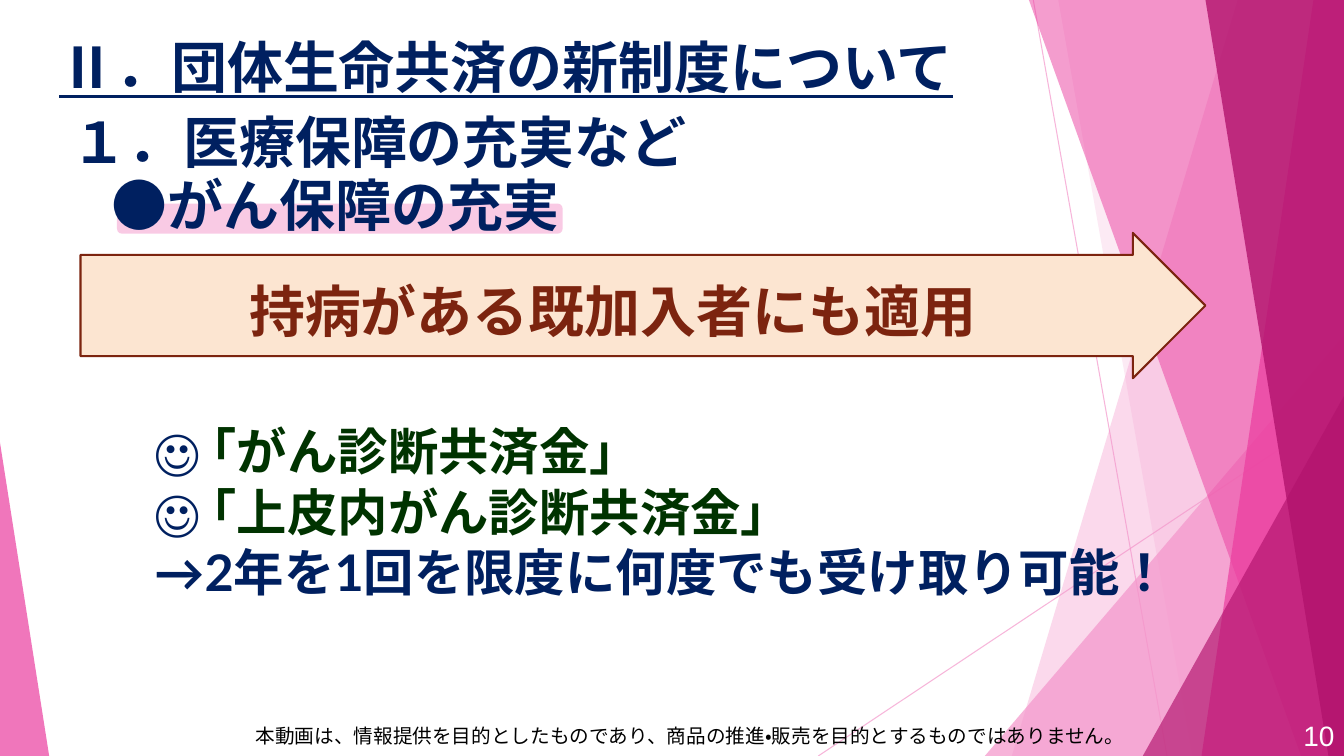
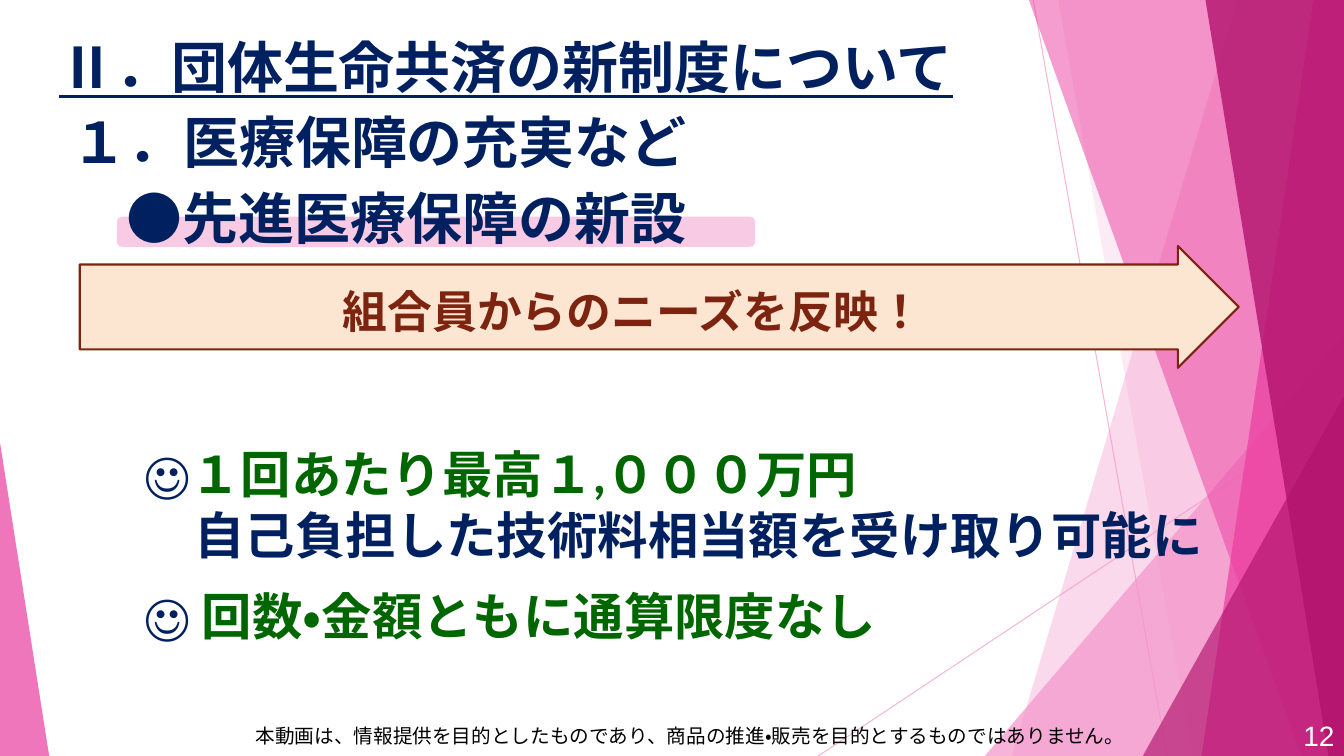
from pptx import Presentation
from pptx.dml.color import RGBColor
from pptx.enum import shapes, text
from pptx.enum.lang import MSO_LANGUAGE_ID
from pptx.oxml.ns import qn
from pptx.util import Cm, Pt
from lxml import etree

W, H = 33.87, 19.05
NAVY, BROWN, PEACH = "002060", "7C240F", "FCE5D1"
DARK_GREEN, GREEN = "003300", "006600"
PALE, PINK, DEEP = "F496CB", "EB3D9F", "B2136D"
BLACK, WHITE = "000000", "FFFFFF"
NOTE = "本動画は、情報提供を目的としたものであり、商品の推進・販売を目的とするものではありません。"
SECTION = "１．医療保障の充実など"
TITLE = [("Ⅱ", "Arial"), ("．団体生命共済の新制度について", "Lato")]
LEFT, CENTER, RIGHT = text.PP_ALIGN.LEFT, text.PP_ALIGN.CENTER, text.PP_ALIGN.RIGHT


def rgb(color):
    return RGBColor.from_string(color)


def cm(*values):
    return [Cm(v) for v in values]


def set_alpha(fmt, percent):
    clr = fmt._xPr.find(".//" + qn("a:srgbClr"))
    etree.SubElement(clr, qn("a:alpha")).set("val", str(percent * 1000))


def paint(sp, color, percent=None, line=None):
    sp.shadow.inherit = False
    sp.fill.solid()
    sp.fill.fore_color.rgb = rgb(color)
    if percent:
        set_alpha(sp.fill, percent)
    if line:
        sp.line.color.rgb = rgb(line)
        sp.line.width = Pt(1.5)
    else:
        sp.line.fill.background()


def add_run(p, words, size, color, font="Lato", bold=True, underline=None):
    r = p.add_run()
    r.text = words
    f = r.font
    f.name, f.size, f.bold, f.underline = font, Pt(size), bold, underline
    f.color.rgb = rgb(color)
    f.language_id = MSO_LANGUAGE_ID.JAPANESE


def add_label(parent, box, words, size, color, align=LEFT, **style):
    tf = parent.add_textbox(*cm(*box)).text_frame
    tf.word_wrap = True
    p = tf.paragraphs[0]
    p.alignment = align
    add_run(p, words, size, color, **style)
    return tf


def add_ray(g, x1, y1, x2, y2):
    c = g.add_connector(shapes.MSO_CONNECTOR.STRAIGHT, *cm(x1, y1, x2, y2))
    c.line.color.rgb = rgb(PALE)
    c.line.width = Pt(0.75)
    set_alpha(c.line.fill, 70)
    etree.SubElement(c.element.spPr, qn("a:effectLst"))


def add_band(g, top_x, bottom_x, color, percent):
    b = g.build_freeform(*cm(top_x, 0))
    b.add_line_segments([cm(W, 0), cm(W, H), cm(bottom_x, H)], close=True)
    paint(b.convert_to_shape(), color, percent)


def add_corner(g, x, width, height, apex, color, percent):
    sp = g.add_shape(shapes.MSO_SHAPE.ISOSCELES_TRIANGLE, *cm(x, H - height, width, height))
    sp.adjustments[0] = apex
    paint(sp, color, percent)


def add_facets(s, layout):
    group = s.shapes.add_group_shape()
    g = group.shapes
    add_ray(g, 26.04, 0, 29.41, H)
    add_ray(g, W, 10.24, 20.62, H)
    add_band(g, 31.19, 25.5, PALE, 36)
    add_band(g, 26.67, 30.05, PALE, 20)
    add_corner(g, 24.82, W - 24.82, 10.59, 1, PALE, 72)
    add_band(g, 25.93, 32.79, PINK, 50)
    add_band(g, 33.1, 30.28, PINK, 70)
    add_band(g, 30.38, 33.48, DEEP, 80)
    add_corner(g, 28.8, W - 28.8, 9.07, 1, DEEP, 66)
    add_corner(g, 0, 1.24, 7.9, 0, PINK, 70)
    for i, el in enumerate(group.element.iter(qn("p:cNvPr"))):
        el.set("id", str(100 + i))
    layout.shapes.element.append(group.element)


def place(sp, box):
    sp.left, sp.top, sp.width, sp.height = cm(*box)
    tf = sp.text_frame
    tf.word_wrap = True
    tf.auto_size = text.MSO_AUTO_SIZE.NONE
    tf.vertical_anchor = text.MSO_ANCHOR.TOP
    return tf


def add_title(s, box):
    p = place(s.shapes.title, box).paragraphs[0]
    p.alignment = LEFT
    for words, font in TITLE:
        add_run(p, words, 40, NAVY, font, underline=True)


def add_heading(s, box, words, shift):
    x, y, w, h = box
    g = s.shapes.add_group_shape().shapes
    bar = g.add_shape(shapes.MSO_SHAPE.ROUNDED_RECTANGLE, *cm(x, y, w, h))
    paint(bar, PALE, 50)
    add_label(g, (x + shift, y - 0.96, w + 0.7, 1.96), words, 40, NAVY)


def add_arrow(s, box, words, size):
    sp = s.shapes.add_shape(shapes.MSO_SHAPE.RIGHT_ARROW, *cm(*box))
    sp.adjustments[0] = 0.697
    paint(sp, PEACH, line=BROWN)
    tf = sp.text_frame
    tf.vertical_anchor = text.MSO_ANCHOR.MIDDLE
    tf.margin_top, tf.margin_right = cm(0.33, 0.5)
    p = tf.paragraphs[0]
    p.alignment = CENTER
    add_run(p, words, size, BROWN)


def add_benefits(s, box, lines):
    tf = place(s.placeholders[1], box)
    for i, (indent, before, runs) in enumerate(lines):
        p = tf.add_paragraph() if i else tf.paragraphs[0]
        p.space_before = Pt(before)
        pPr = p._p.get_or_add_pPr()
        pPr.set("marL", str(Cm(indent)))
        pPr.set("indent", "0")
        etree.SubElement(pPr, qn("a:buNone"))
        for words, color in runs:
            add_run(p, words, 36, color)


def add_footer(s, number):
    tf = add_label(s.shapes, (31.98, 18.03, 1.9, 1.02), number, 20, WHITE, RIGHT,
                   font="Arial", bold=False)
    tf.vertical_anchor = text.MSO_ANCHOR.MIDDLE
    add_label(s.shapes, (1.09, 18.11, 32.61, 0.86), NOTE, 14, BLACK, CENTER,
              font="Arial", bold=False)


def add_benefit_slide(prs, layout, number, heading, arrow, benefits):
    s = prs.slides.add_slide(layout)
    add_title(s, (1.24, 0.69, 31.32, 3.66))
    add_arrow(s, *arrow)
    add_benefits(s, *benefits)
    add_label(s.shapes, (1.55, 2.59, 17.5, 1.96), SECTION, 40, NAVY)
    add_heading(s, *heading)
    add_footer(s, number)
    return s


def main():
    prs = Presentation()
    prs.slide_width, prs.slide_height = cm(W, H)
    layout = prs.slide_layouts[1]
    s = add_benefit_slide(
        prs, layout, "10",
        ((2.95, 5.13, 11.23, 0.76), "●がん保障の充実", -0.38),
        ((2.03, 5.87, 28.35, 3.66), "持病がある既加入者にも適用", 40),
        ((3.63, 10.46, 26.54, 6.5), [
            (0, 0, [("☺ ", NAVY), ("｢がん診断共済金｣", DARK_GREEN)]),
            (0, 0, [("☺ ", NAVY), ("｢上皮内がん診断共済金｣", DARK_GREEN)]),
            (0, 0, [("→2年を1回を限度に何度でも受け取り可能！", NAVY)]),
        ]))
    add_facets(s, layout)
    add_benefit_slide(
        prs, layout, "12",
        ((2.95, 5.46, 16.08, 0.76), "●先進医療保障の新設", 0),
        ((2.01, 6.2, 29.21, 3.07), "組合員からのニーズを反映！", 32),
        ((3.38, 11.05, 28.88, 5.38), [
            (0, 0, [("☺", NAVY), ("１回あたり最高１,０００万円", GREEN)]),
            (1.27, 0, [("自己負担した技術料相当額を受け取り可能に", NAVY)]),
            (0, 15, [("☺ ", NAVY), ("回数・金額ともに通算限度なし", GREEN)]),
        ]))
    prs.save("out.pptx")


if __name__ == "__main__":
    main()
